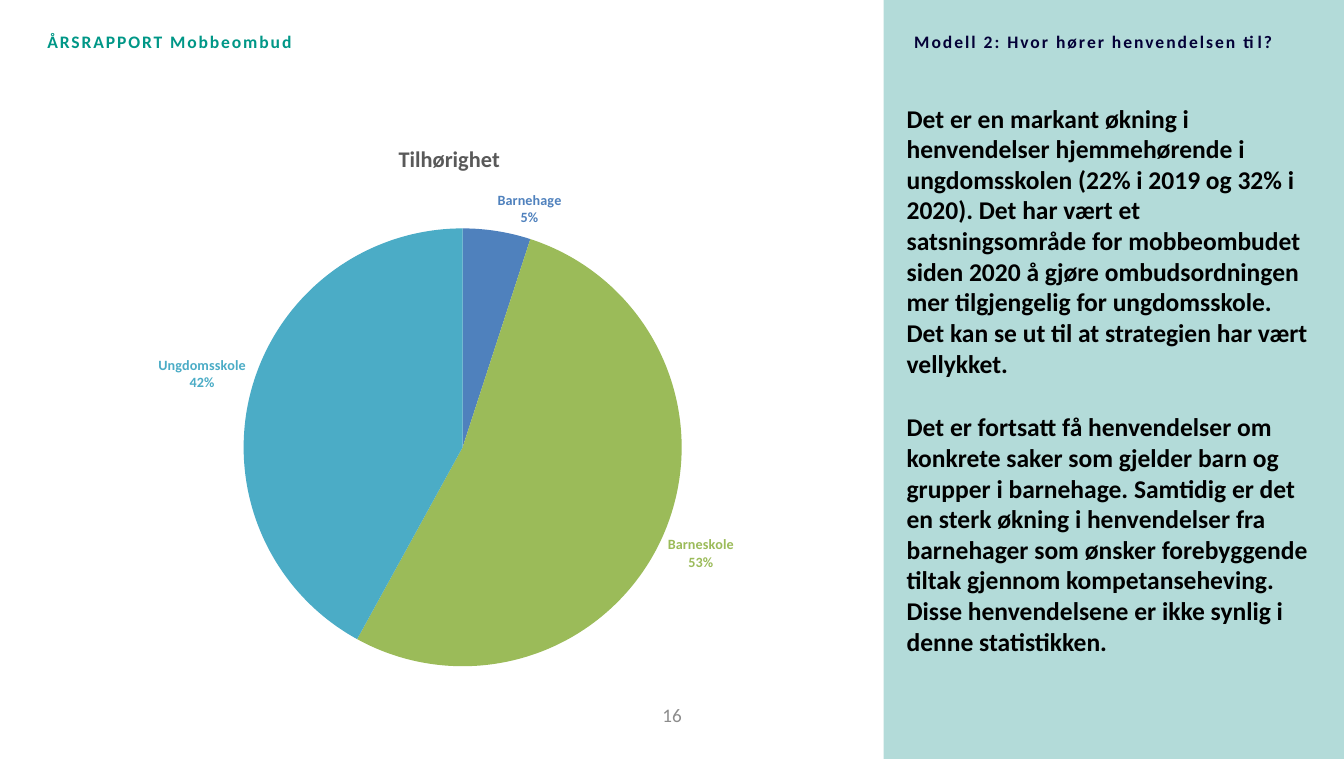
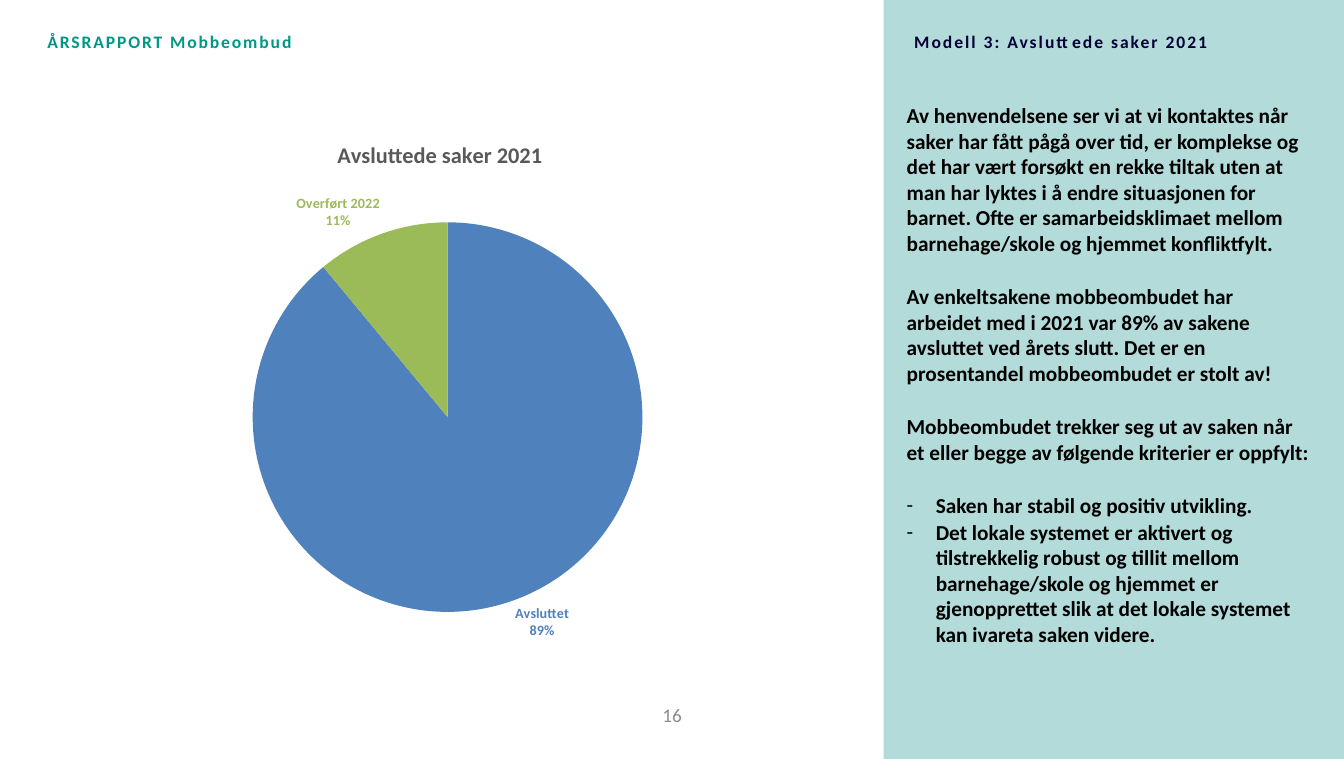
from collections import namedtuple

from lxml import etree
from pptx import Presentation
from pptx.chart.data import CategoryChartData
from pptx.dml.color import RGBColor
from pptx.enum.chart import XL_CHART_TYPE, XL_LABEL_POSITION
from pptx.enum.shapes import MSO_SHAPE
from pptx.enum.text import MSO_ANCHOR, MSO_AUTO_SIZE, PP_ALIGN
from pptx.oxml.ns import qn
from pptx.util import Inches, Pt

PIE = XL_CHART_TYPE.PIE
OUTSIDE_END = XL_LABEL_POSITION.OUTSIDE_END
RECTANGLE = MSO_SHAPE.RECTANGLE
TOP = MSO_ANCHOR.TOP
NO_FIT = MSO_AUTO_SIZE.NONE
LEFT, CENTER = PP_ALIGN.LEFT, PP_ALIGN.CENTER

FONT = "Calibri"
PANEL = RGBColor(0xB3, 0xDB, 0xD9)
NAVY = RGBColor(0x04, 0x00, 0x37)
TEAL = RGBColor(0x00, 0x97, 0x87)
BLACK = RGBColor(0x00, 0x00, 0x00)
PAGE_GRAY = RGBColor(0x8C, 0x8C, 0x8C)
TITLE_GRAY = RGBColor(0x59, 0x59, 0x59)
BLUE = RGBColor(0x4F, 0x81, 0xBD)
GREEN = RGBColor(0x9B, 0xBB, 0x59)
AQUA = RGBColor(0x4B, 0xAC, 0xC6)

WIDTH, HEIGHT = Inches(17.54), Inches(9.91)
COLUMN, ROW = WIDTH / 200, HEIGHT / 100
INDENT, BULLET_INDENT = Inches(0.01), Inches(0.39)
LINE_HEIGHT = 1.22
BODY_SPACE = 0.9

Slice = namedtuple("Slice", "name percent color")
Paragraph = namedtuple("Paragraph", "text bullet gap", defaults=(False, True))
PieSpec = namedtuple("PieSpec", "title slices box plot title_corner")
Page = namedtuple("Page", "heading size paragraphs pie")


class Box(namedtuple("Box", "column row columns rows")):
    """A rectangle on the grid of 200 columns and 100 rows."""

    def inner(self, column, row, columns, rows):
        """Return a box placed relative to this one."""
        return Box(self.column + column, self.row + row, columns, rows)

    def lengths(self):
        """Return left, top, width and height."""
        return (round(self.column * COLUMN), round(self.row * ROW),
                round(self.columns * COLUMN), round(self.rows * ROW))


SLIDE_BOX = Box(0, 0, 200, 100)
PANEL_BOX = Box(131.5, 0, 68.5, 100)

PAGES = [
    Page(
        "Modell 2: Hvor hører henvendelsen til?", 24,
        [
            Paragraph("Det er en markant økning i henvendelser hjemmehørende i "
                      "ungdomsskolen (22% i 2019 og 32% i 2020). Det har vært et "
                      "satsningsområde for mobbeombudet siden 2020 å gjøre "
                      "ombudsordningen mer tilgjengelig for ungdomsskole. Det kan "
                      "se ut til at strategien har vært vellykket.", gap=False),
            Paragraph("Det er fortsatt få henvendelser om konkrete saker som gjelder "
                      "barn og grupper i barnehage. Samtidig er det en sterk økning i "
                      "henvendelser fra barnehager som ønsker forebyggende tiltak "
                      "gjennom kompetanseheving. Disse henvendelsene er ikke synlig i "
                      "denne statistikken."),
        ],
        PieSpec("Tilhørighet",
                [Slice("Barnehage", 5, BLUE), Slice("Barneskole", 53, GREEN),
                 Slice("Ungdomsskole", 42, AQUA)],
                SLIDE_BOX.inner(10.4, 16.15, 112.4, 73.15),
                (0.23, 0.19, 0.58, 0.79), (0.43, 0.03)),
    ),
    Page(
        "Modell 3: Avsluttede saker 2021", 20,
        [
            Paragraph("Av henvendelsene ser vi at vi kontaktes når saker har fått "
                      "pågå over tid, er komplekse og det har vært forsøkt en rekke "
                      "tiltak uten at man har lyktes i å endre situasjonen for barnet. "
                      "Ofte er samarbeidsklimaet mellom barnehage/skole og hjemmet "
                      "konfliktfylt.", gap=False),
            Paragraph("Av enkeltsakene mobbeombudet har arbeidet med i 2021 var 89% av "
                      "sakene avsluttet ved årets slutt. Det er en prosentandel "
                      "mobbeombudet er stolt av!"),
            Paragraph("Mobbeombudet trekker seg ut av saken når et eller begge av "
                      "følgende kriterier er oppfylt:"),
            Paragraph("Saken har stabil og positiv utvikling.", bullet=True),
            Paragraph("Det lokale systemet er aktivert og tilstrekkelig robust og "
                      "tillit mellom barnehage/skole og hjemmet er gjenopprettet slik "
                      "at det lokale systemet kan ivareta saken videre.",
                      bullet=True, gap=False),
        ],
        PieSpec("Avsluttede saker 2021",
                [Slice("Avsluttet", 89, BLUE), Slice("Overført 2022", 11, GREEN)],
                SLIDE_BOX.inner(15.6, 15.75, 100, 70.65),
                (0.22, 0.19, 0.58, 0.73), (0.34, 0.03)),
    ),
]


def style_font(font, size, color, bold=True):
    """Set the typeface, size, colour and weight of a font."""
    font.name, font.size, font.bold = FONT, Pt(size), bold
    font.color.rgb = color


def prepare_text(shape, box):
    """Place a shape and return its text frame without margins."""
    shape.left, shape.top, shape.width, shape.height = box.lengths()
    frame = shape.text_frame
    frame.word_wrap, frame.auto_size, frame.vertical_anchor = True, NO_FIT, TOP
    frame.margin_left = frame.margin_right = frame.margin_bottom = 0
    frame.margin_top = Inches(0.01)
    return frame


def format_paragraph(paragraph, size, color, space=0, bold=True,
                     alignment=LEFT, tracking=0):
    """Format a paragraph and its runs."""
    paragraph.alignment = alignment
    paragraph.space_before = Pt(space)
    for run in paragraph.runs:
        style_font(run.font, size, color, bold)
        if tracking:
            run.font._element.set("spc", str(round(tracking * 100)))


def set_bullet(paragraph, bullet):
    """Give a paragraph a hanging dash or no bullet at all."""
    properties = paragraph._p.get_or_add_pPr()
    margin = BULLET_INDENT if bullet else INDENT
    properties.set("marL", str(margin))
    properties.set("indent", str(INDENT - margin))
    if bullet:
        etree.SubElement(properties, qn("a:buFont")).set("typeface", FONT)
        etree.SubElement(properties, qn("a:buChar")).set("char", "-")
    else:
        etree.SubElement(properties, qn("a:buNone"))


def add_label(slide, box, text, size, color, **formatting):
    """Add a one-line text box."""
    frame = prepare_text(slide.shapes.add_textbox(*box.lengths()), box)
    frame.text = text
    format_paragraph(frame.paragraphs[0], size, color, **formatting)


def add_panel(slide, box, page):
    """Fill the side panel with its heading and body text."""
    panel = slide.shapes.add_shape(RECTANGLE, *box.lengths())
    panel.shadow.inherit = False
    panel.fill.solid()
    panel.fill.fore_color.rgb = PANEL
    panel.line.fill.background()
    panel.element.getparent().insert(2, panel.element)

    heading = prepare_text(slide.shapes.title, box.inner(4.55, 3.95, 63, 3))
    heading.text = page.heading
    format_paragraph(heading.paragraphs[0], 16.5, NAVY, BODY_SPACE, tracking=1.9)

    body = prepare_text(slide.placeholders[1], box.inner(3.3, 13.4, 60.5, 82))
    body.text = "\n".join(item.text for item in page.paragraphs)
    gap = page.size * LINE_HEIGHT + BODY_SPACE
    for paragraph, item in zip(body.paragraphs, page.paragraphs):
        space = BODY_SPACE + (gap if item.gap else 0)
        format_paragraph(paragraph, page.size, BLACK, round(space, 1))
        set_bullet(paragraph, item.bullet)


def set_layout(parent, index, shares):
    """Fix a chart part at shares of the chart's size."""
    for old in parent.findall(qn("c:layout")):
        parent.remove(old)
    layout = etree.Element(qn("c:layout"))
    manual = etree.SubElement(layout, qn("c:manualLayout"))
    settings = [("xMode", "edge"), ("yMode", "edge"), *zip("xywh", shares)]
    if len(shares) == 4:
        settings.insert(0, ("layoutTarget", "inner"))
    for name, value in settings:
        etree.SubElement(manual, qn("c:" + name)).set("val", str(value))
    parent.insert(index, layout)


def show_name_and_percent(chart):
    """Make every label show its category above its percentage."""
    for last in list(chart.element.iter(qn("c:showBubbleSize"))):
        labels = last.getparent()
        for name, value in (("showVal", "0"), ("showCatName", "1"), ("showPercent", "1")):
            labels.find(qn("c:" + name)).set("val", value)
        separator = etree.Element(qn("c:separator"))
        separator.text = "\n"
        last.addnext(separator)


def add_pie(slide, pie):
    """Add a pie chart with coloured labels outside its slices."""
    data = CategoryChartData()
    data.categories = [part.name for part in pie.slices]
    data.add_series("Series 1", [part.percent for part in pie.slices])
    chart = slide.shapes.add_chart(PIE, *pie.box.lengths(), data).chart
    style_font(chart.font, 10, BLACK, False)
    chart.has_legend = False
    chart.has_title = True
    title = chart.chart_title
    title.text_frame.text = pie.title
    format_paragraph(title.text_frame.paragraphs[0], 21, TITLE_GRAY)
    title.include_in_layout = False

    plot = chart.plots[0]
    plot.vary_by_categories = True
    series = plot.series[0]
    series.data_labels.position = OUTSIDE_END
    for index, part in enumerate(pie.slices):
        point = series.points[index]
        point.format.fill.solid()
        point.format.fill.fore_color.rgb = part.color
        point.format.line.fill.background()
        style_font(point.data_label.font, 13.3, part.color)
        point.data_label.position = OUTSIDE_END
    show_name_and_percent(chart)
    set_layout(next(chart.element.iter(qn("c:plotArea"))), 0, pie.plot)
    set_layout(next(chart.element.iter(qn("c:title"))), 1, pie.title_corner)


def add_page(presentation, page):
    """Add a slide with a pie chart beside a text panel."""
    slide = presentation.slides.add_slide(presentation.slide_layouts[1])
    add_panel(slide, PANEL_BOX, page)
    add_label(slide, SLIDE_BOX.inner(7.05, 3.95, 49.3, 3), "ÅRSRAPPORT Mobbeombud",
              16.5, TEAL, space=1.1, tracking=1.8)
    add_label(slide, SLIDE_BOX.inner(68, 92.5, 64, 5), "16", 18, PAGE_GRAY,
              bold=False, alignment=CENTER)
    add_pie(slide, page.pie)


def main():
    """Build and save the presentation."""
    presentation = Presentation()
    presentation.slide_width, presentation.slide_height = WIDTH, HEIGHT
    for page in PAGES:
        add_page(presentation, page)
    presentation.save("out.pptx")


if __name__ == "__main__":
    main()
